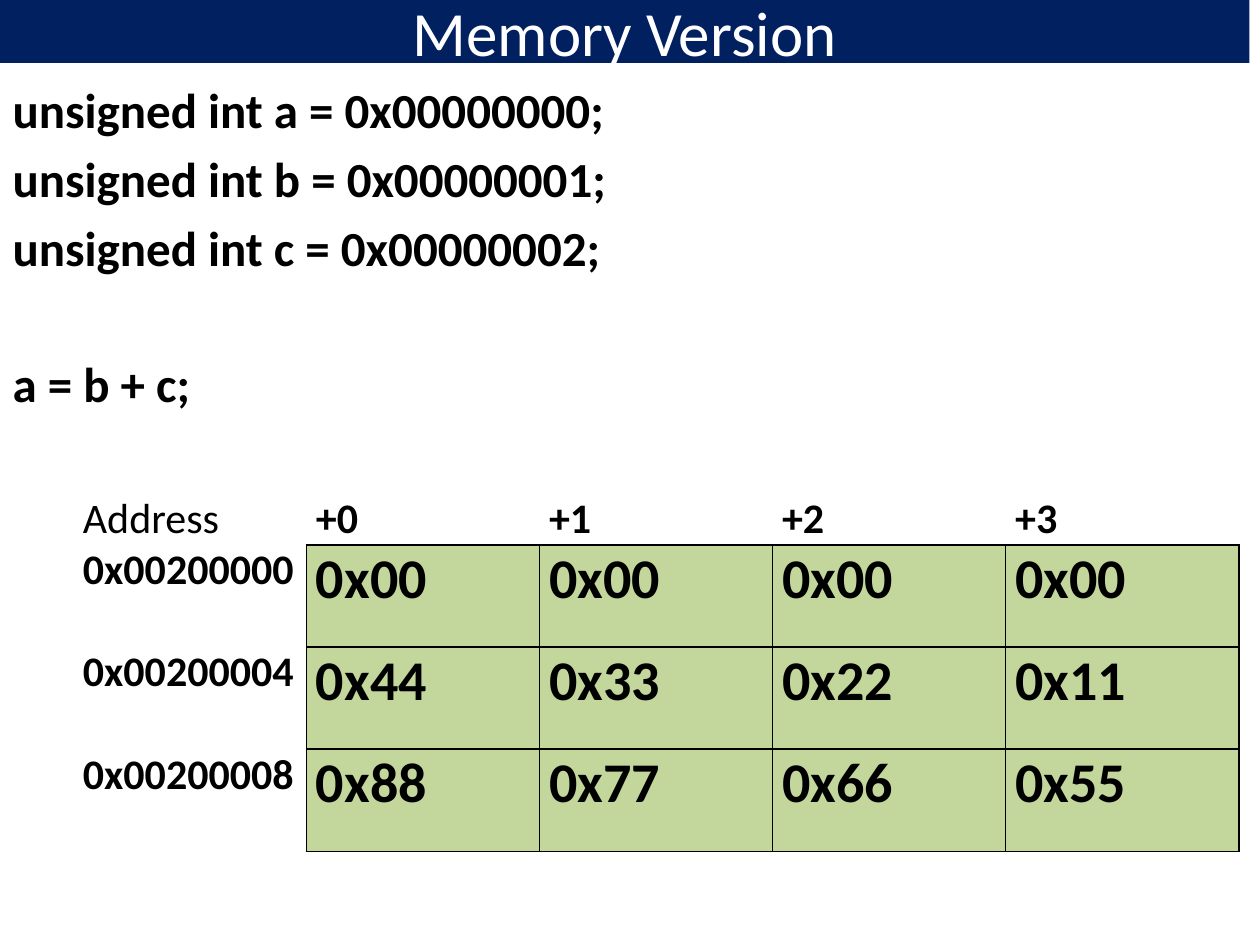
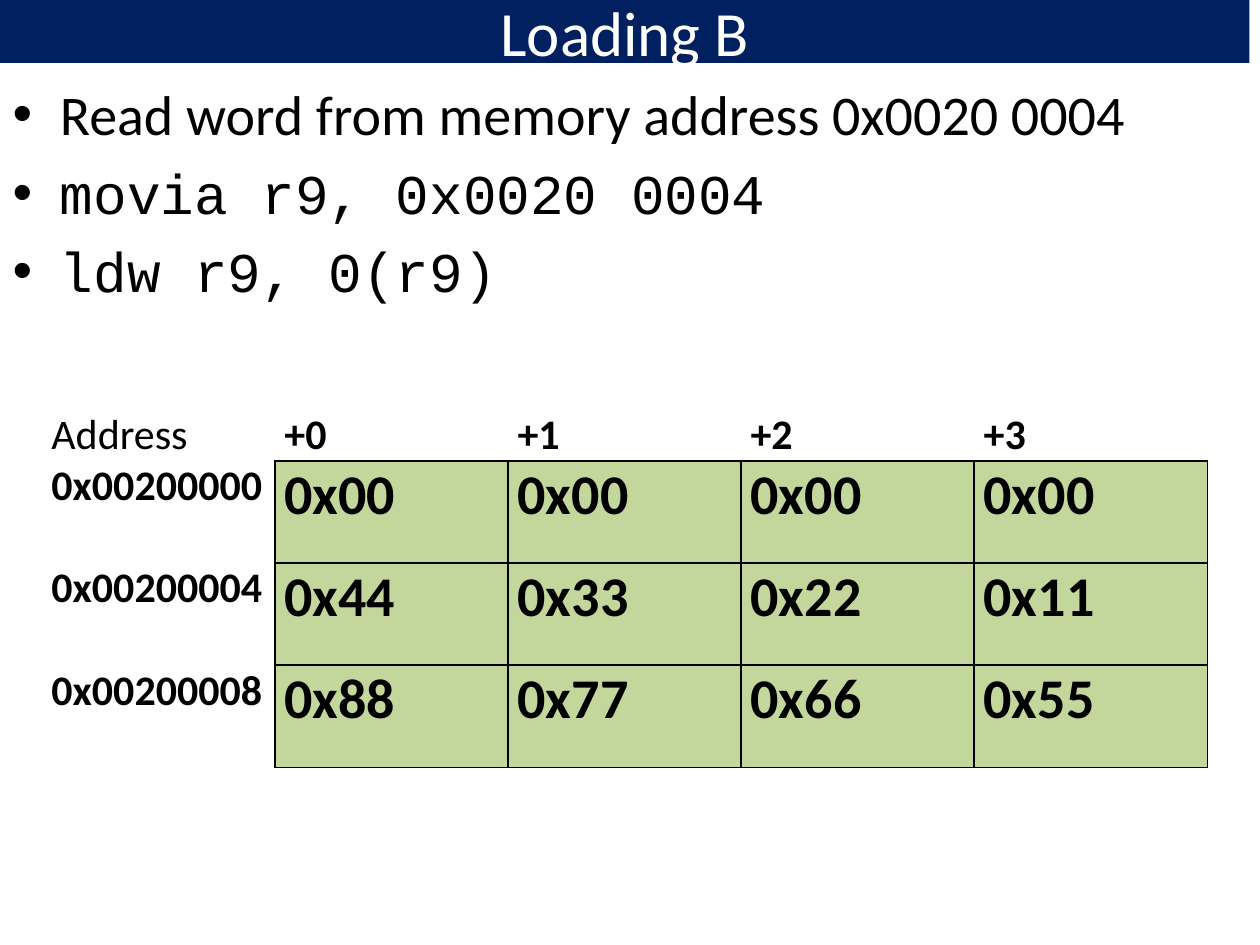
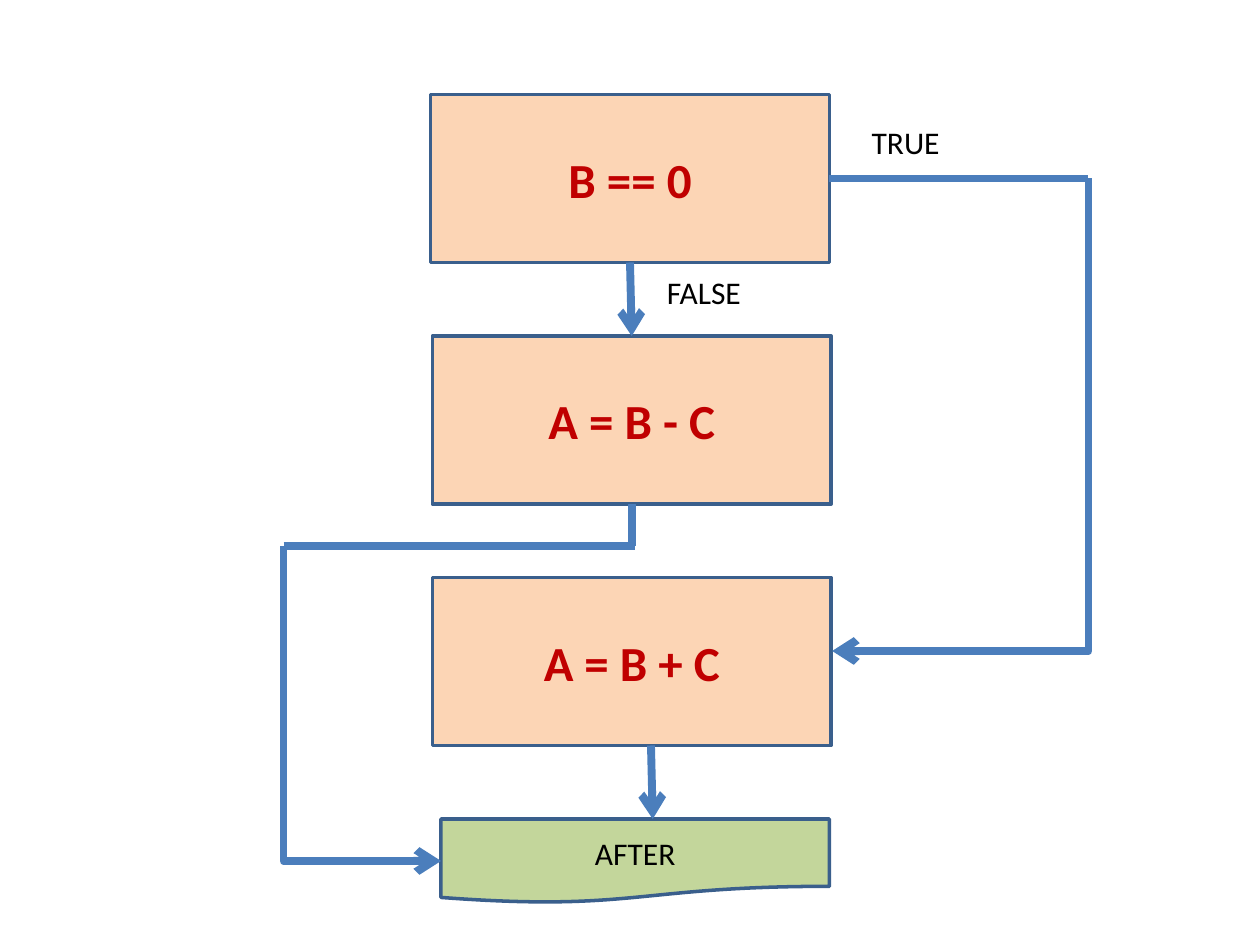
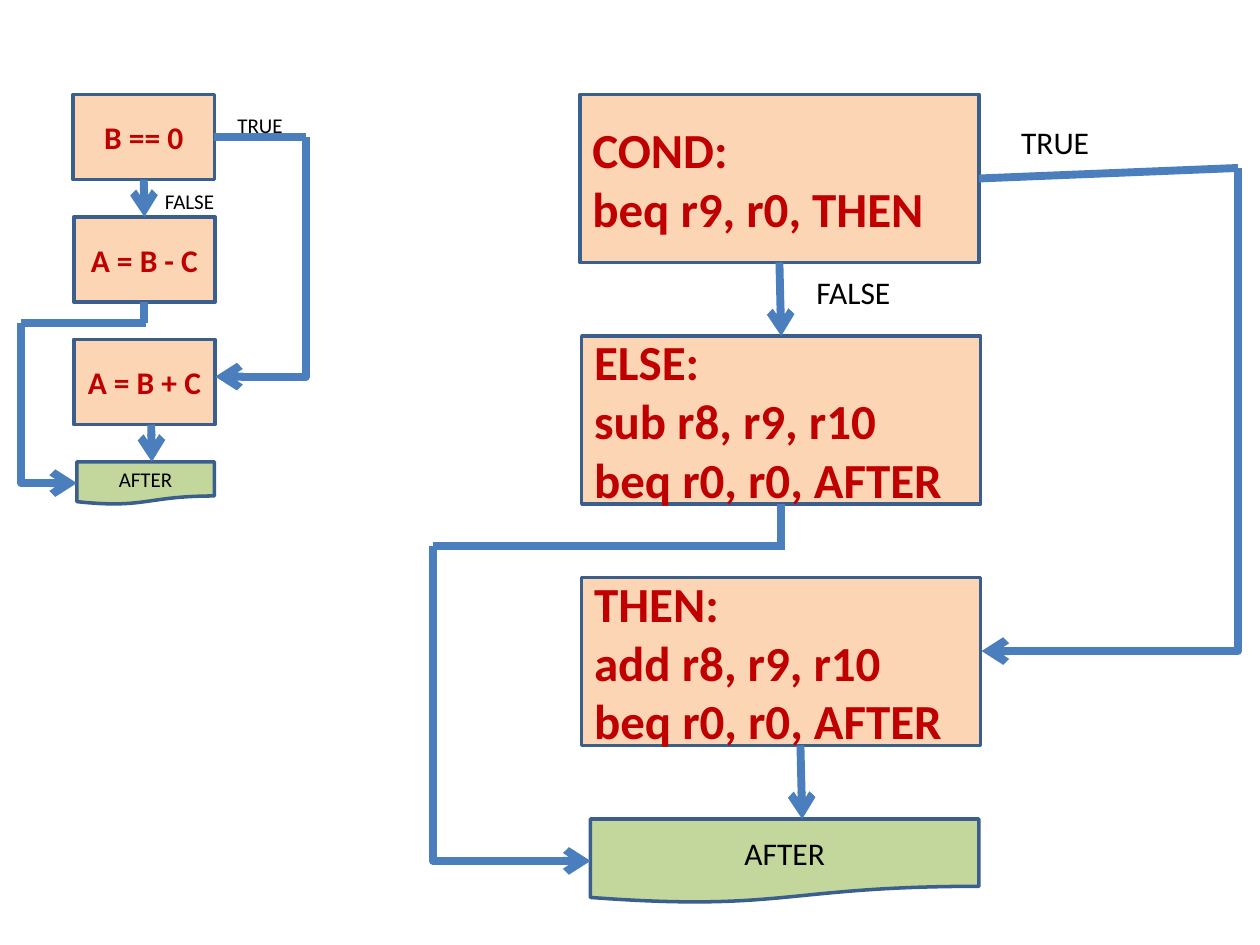
"""Build four slides on memory layout and on branching in assembly language."""
from dataclasses import dataclass

from lxml.etree import SubElement
from pptx import Presentation
from pptx.dml.color import RGBColor
from pptx.enum.shapes import MSO_CONNECTOR, MSO_SHAPE
from pptx.enum.text import MSO_ANCHOR, MSO_AUTO_SIZE, PP_ALIGN
from pptx.oxml.ns import qn
from pptx.util import Pt


@dataclass(frozen=True)
class Theme:
    navy: str = "002060"
    white: str = "FFFFFF"
    black: str = "000000"
    green: str = "C3D69B"
    peach: str = "FCD5B5"
    red: str = "C00000"
    outline: str = "3A5F8C"
    arrow: str = "4B7EBC"
    font: str = "Calibri"
    code_font: str = "Courier New"
    title_size: int = 36
    bullet_size: int = 32
    byte_size: int = 32
    code_size: int = 28
    address_size: int = 24
    label_size: int = 18
    small_size: int = 12


THEME = Theme()
NO_TABLE_STYLE = "{2D5ABB26-0587-4C30-8999-92F81FD0307C}"


def write_text(frame, text, size, color=THEME.black, bold=False, align=PP_ALIGN.LEFT,
               anchor=MSO_ANCHOR.TOP, wrap=True, fit=MSO_AUTO_SIZE.NONE):
    frame.text = text
    frame.word_wrap = wrap
    frame.auto_size = fit
    frame.vertical_anchor = anchor
    for paragraph in frame.paragraphs:
        paragraph.alignment = align
        font = paragraph.runs[0].font
        font.name, font.size, font.bold = THEME.font, Pt(size), bold
        font.color.rgb = RGBColor.from_string(color)


def draw_border(cell, side, color):
    border = SubElement(cell._tc.get_or_add_tcPr(), qn(f"a:ln{side}"), w=str(Pt(1)))
    fill = SubElement(border, qn("a:solidFill"))
    SubElement(fill, qn("a:srgbClr"), val=color)


prs = Presentation()
prs.slide_width, prs.slide_height = Pt(720), Pt(540)
content_layout, blank_layout = prs.slide_layouts[1], prs.slide_layouts[6]

memory = [
    ["Address", "+0", "+1", "+2", "+3"],
    ["0x00200000", "0x00", "0x00", "0x00", "0x00"],
    ["0x00200004", "0x44", "0x33", "0x22", "0x11"],
    ["0x00200008", "0x88", "0x77", "0x66", "0x55"],
]
declarations = ("unsigned int a = 0x00000000;\nunsigned int b = 0x00000001;\n"
                "unsigned int c = 0x00000002;\na = b + c;")
load_steps = "Read word from memory address 0x0020 0004\nmovia r9, 0x0020 0004\nldw r9, 0(r9)"

memory_slides = [
    ("Memory Version", declarations, THEME.code_size, True, 42, 282),
    ("Loading B", load_steps, THEME.bullet_size, False, 24, 234),
]
for heading, statements, size, is_program, memory_left, memory_top in memory_slides:
    slide = prs.slides.add_slide(content_layout)
    title, body = slide.placeholders
    title.left, title.top, title.width, title.height = Pt(0), Pt(0), Pt(714), Pt(36)
    title.fill.solid()
    title.fill.fore_color.rgb = RGBColor.from_string(THEME.navy)
    write_text(title.text_frame, heading, THEME.title_size, color=THEME.white,
               align=PP_ALIGN.CENTER, anchor=MSO_ANCHOR.MIDDLE)

    body.left, body.top, body.width, body.height = Pt(0), Pt(42), Pt(720), Pt(498)
    write_text(body.text_frame, statements, size, bold=is_program)
    lines = body.text_frame.paragraphs
    if is_program:
        lines[-1].space_before = Pt(44.5)
        for line in lines:
            properties = line._p.get_or_add_pPr()
            properties.set("marL", "0")
            properties.set("indent", "0")
            SubElement(properties, qn("a:buNone"))
    else:
        for line in lines[1:]:
            line.runs[0].font.name = THEME.code_font

    memory_map = slide.shapes.add_table(4, 5, Pt(memory_left), Pt(memory_top),
                                        Pt(666), Pt(204)).table
    memory_map._tbl.tblPr.find(qn("a:tableStyleId")).text = NO_TABLE_STYLE
    memory_map.first_row = memory_map.horz_banding = False
    for column in memory_map.columns:
        column.width = Pt(133.2)
    for r, values in enumerate(memory):
        memory_map.rows[r].height = Pt(58.4 if r else 28.8)
        for c, value in enumerate(values):
            cell = memory_map.cell(r, c)
            cell.margin_left = cell.margin_right = Pt(5.4)
            cell.margin_top = cell.margin_bottom = Pt(0)
            is_byte = r > 0 and c > 0
            sides = "LRTB" if is_byte else "R" if r else "B" if c else ""
            for side in sides:
                draw_border(cell, side, THEME.black)
            if is_byte:
                cell.fill.solid()
                cell.fill.fore_color.rgb = RGBColor.from_string(THEME.green)
            else:
                cell.fill.background()
            run = cell.text_frame.paragraphs[0].add_run()
            run.text = value
            run.font.name = THEME.font
            run.font.size = Pt(THEME.byte_size if is_byte else THEME.address_size)
            run.font.bold = r + c > 0
            run.font.color.rgb = RGBColor.from_string(THEME.black)

branch_slide = prs.slides.add_slide(blank_layout)
assembly_slide = prs.slides.add_slide(blank_layout)
conditions = ["B == 0", "A = B - C", "A = B + C"]
assembly = [
    "COND:\nbeq r9, r0, THEN",
    "ELSE:\nsub r8, r9, r10\nbeq r0, r0, AFTER",
    "THEN:\nadd r8, r9, r10\nbeq r0, r0, AFTER",
]
flows = [
    (branch_slide, conditions, 246, 1, 1, THEME.code_size, THEME.label_size, PP_ALIGN.CENTER, 48),
    (assembly_slide, assembly, 331.4, 1, 1, THEME.code_size, THEME.label_size, PP_ALIGN.LEFT, 42),
    (assembly_slide, conditions, 41.8, 0.354, 0.507, THEME.label_size, THEME.small_size,
     PP_ALIGN.CENTER, 48),
]
flow_top = 54
for slide, steps, left, x_scale, y_scale, step_size, label_size, align, true_corner in flows:
    boxes = [(MSO_SHAPE.RECTANGLE, step, min(i, 1), 138 * i, 228, 96, THEME.peach, THEME.red,
              step_size, True, align) for i, step in enumerate(steps)]
    boxes.append((MSO_SHAPE.FLOWCHART_DOCUMENT, "AFTER", 6, 414, 222, 48, THEME.green,
                  THEME.black, label_size, False, PP_ALIGN.CENTER))
    for kind, text, x, y, width, height, fill, color, size, bold, text_align in boxes:
        box = slide.shapes.add_shape(kind, Pt(left + x * x_scale), Pt(flow_top + y * y_scale),
                                     Pt(width * x_scale), Pt(height * y_scale))
        box.shadow.inherit = False
        box.fill.solid()
        box.fill.fore_color.rgb = RGBColor.from_string(fill)
        box.line.color.rgb = RGBColor.from_string(THEME.outline)
        box.line.width = Pt(2)
        write_text(box.text_frame, text, size, color=color, bold=bold, align=text_align,
                   anchor=MSO_ANCHOR.MIDDLE)

    routes = [
        (114, 96, 115, 138, True, False),
        (376, true_corner, 229.5, 318, True, True),
        (228, 48, 376, true_corner, False, False),
        (126, 372, 127, 414, True, False),
        (-84, 258, 6, 438, True, True),
        (-84, 258, 117, 258, False, False),
        (115, 234, 115, 258, False, False),
    ]
    for x1, y1, x2, y2, has_arrow, is_bent in routes:
        x1, x2 = left + x1 * x_scale, left + x2 * x_scale
        y1, y2 = flow_top + y1 * y_scale, flow_top + y2 * y_scale
        goes_right = x2 > x1
        if is_bent:
            center_x, center_y = (x1 + x2) / 2, (y1 + y2) / 2
            half_run, half_rise = (y2 - y1) / 2, abs(x2 - x1) / 2
            x1, x2 = center_x - half_run, center_x + half_run
            y1, y2 = center_y - half_rise, center_y + half_rise
        route = slide.shapes.add_connector(
            MSO_CONNECTOR.ELBOW if is_bent else MSO_CONNECTOR.STRAIGHT,
            Pt(x1), Pt(y1), Pt(x2), Pt(y2))
        route.line.color.rgb = RGBColor.from_string(THEME.arrow)
        route.line.width = Pt(4.5)
        properties = route.element.spPr
        if is_bent:
            properties.find(qn("a:prstGeom")).set("prst", "bentConnector2")
            frame = properties.find(qn("a:xfrm"))
            frame.set("rot", "16200000" if goes_right else "5400000")
            if goes_right:
                frame.set("flipH", "1")
        if has_arrow:
            SubElement(properties.find(qn("a:ln")), qn("a:tailEnd"), type="arrow")
        SubElement(properties, qn("a:effectLst"))

    for answer, x, y, text_width in [("FALSE", 128, 98.6, 2.36), ("TRUE", 245, 13, 2.2)]:
        label = slide.shapes.add_textbox(Pt(left + x * x_scale), Pt(flow_top + y * y_scale),
                                         Pt(14.4 + text_width * label_size),
                                         Pt(7.2 + 1.2 * label_size))
        write_text(label.text_frame, answer, label_size, wrap=False,
                   fit=MSO_AUTO_SIZE.SHAPE_TO_FIT_TEXT)

prs.save("out.pptx")
